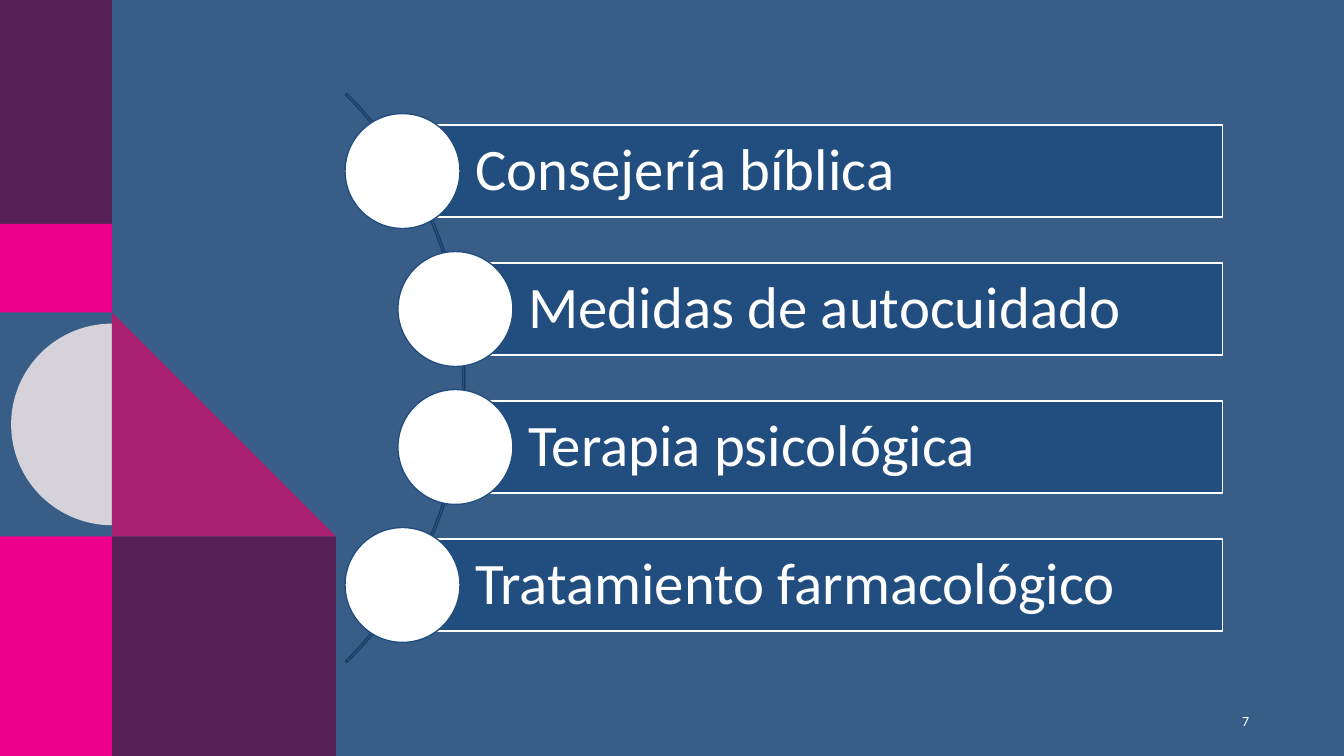
from math import cos, pi, sin

from pptx import Presentation
from pptx.dml.color import RGBColor
from pptx.enum.shapes import MSO_SHAPE
from pptx.enum.text import MSO_ANCHOR, PP_ALIGN
from pptx.util import Pt

COLORS = {
    "background": "385E88",
    "plum": "582156",
    "pink": "EC008C",
    "magenta": "AA2070",
    "pale": "D5D2DA",
    "bar": "224E7F",
    "arc": "1B3E66",
    "white": "FFFFFF",
}
FONT = "Calibri"
TREATMENTS = [
    ("Consejería bíblica", 0),
    ("Medidas de autocuidado", 37.8),
    ("Terapia psicológica", 37.8),
    ("Tratamiento farmacológico", 0),
]


def color(name):
    return RGBColor.from_string(COLORS[name])


def style_shape(shape, fill=None, line=None):
    shape.shadow.inherit = False
    if fill:
        shape.fill.solid()
        shape.fill.fore_color.rgb = color(fill)
    else:
        shape.fill.background()
    if line:
        shape.line.color.rgb = color(line)
        shape.line.width = Pt(1)
    else:
        shape.line.fill.background()


def add_preset(page, kind, box, fill=None, line=None):
    shape = page.shapes.add_shape(kind, *[Pt(length) for length in box])
    style_shape(shape, fill, line)
    return shape


def add_outline(page, points, fill):
    corners = [(Pt(x), Pt(y)) for x, y in points]
    builder = page.shapes.build_freeform(*corners[0])
    builder.add_line_segments(corners[1:], close=True)
    style_shape(builder.convert_to_shape(), fill)


def write_text(shape, text, size, alignment, line_spacing=1.0):
    frame = shape.text_frame
    frame.word_wrap = True
    frame.vertical_anchor = MSO_ANCHOR.MIDDLE
    para = frame.paragraphs[0]
    para.alignment = alignment
    para.line_spacing = line_spacing
    span = para.add_run()
    span.text = text
    span.font.name = FONT
    span.font.size = Pt(size)
    span.font.color.rgb = color("white")


def add_side_pattern(page, box):
    left, top, width, height = box
    unit = width / 3
    middle = left + unit
    triangle_top = top + 223.2
    triangle_bottom = triangle_top + 2 * unit
    bottom = top + height
    tiles = [
        (middle, triangle_bottom, 2 * unit, bottom - triangle_bottom, "plum"),
        (left, triangle_bottom, unit, bottom - triangle_bottom, "pink"),
        (left, top, unit, 2 * unit, "plum"),
        (left, top + 2 * unit, unit, triangle_top - top - 2 * unit, "pink"),
    ]
    for *tile, fill in tiles:
        add_preset(page, MSO_SHAPE.RECTANGLE, tile, fill)

    radius = 0.9 * unit
    center = triangle_top + unit
    steps = 90
    angles = [pi / 2 + pi * step / steps for step in range(steps + 1)]
    half_circle = [(middle + radius * cos(angle), center + radius * sin(angle))
                   for angle in angles]
    add_outline(page, half_circle, "pale")
    triangle = [
        (middle, triangle_top),
        (middle + 2 * unit, triangle_bottom),
        (middle, triangle_bottom),
    ]
    add_outline(page, triangle, "magenta")


def add_treatments(page, box):
    left, top, width, height = box
    diameter = 574.6
    arc_box = (left - 530, top + (height - diameter) / 2, diameter, diameter)
    arc = add_preset(page, MSO_SHAPE.BLOCK_ARC, arc_box, line="arc")
    for index, value in enumerate((189, 27, 0.27 / 100)):
        arc.adjustments[index] = value

    bar_height = 65.7
    circle = 1.25 * bar_height
    pitch = (height - bar_height) / (len(TREATMENTS) - 1)
    for index, (label, indent) in enumerate(TREATMENTS):
        bar_left = left + indent
        bar_top = top + index * pitch
        bar_box = (bar_left, bar_top, width - indent, bar_height)
        bar = add_preset(page, MSO_SHAPE.RECTANGLE, bar_box, "bar", "white")
        frame = bar.text_frame
        frame.margin_left = Pt(52.15)
        frame.margin_right = frame.margin_top = frame.margin_bottom = Pt(8.4)
        write_text(bar, label, 42, PP_ALIGN.LEFT, 0.9)
        circle_box = (bar_left - circle / 2,
                      bar_top + (bar_height - circle) / 2, circle, circle)
        add_preset(page, MSO_SHAPE.OVAL, circle_box, "white", "bar")


def add_page_number(page, box):
    number = page.shapes.add_textbox(*[Pt(length) for length in box])
    write_text(number, "7", 10, PP_ALIGN.RIGHT)


def main():
    deck = Presentation()
    deck.slide_width = Pt(960)
    deck.slide_height = Pt(540)
    page = deck.slides.add_slide(deck.slide_layouts[6])
    page.background.fill.solid()
    page.background.fill.fore_color.rgb = color("background")
    add_side_pattern(page, (0, 0, 240, 540))
    add_page_number(page, (863.3, 500.4, 36, 28.8))
    add_treatments(page, (287.5, 89.3, 585.8, 361.4))
    deck.save("out.pptx")


if __name__ == "__main__":
    main()
